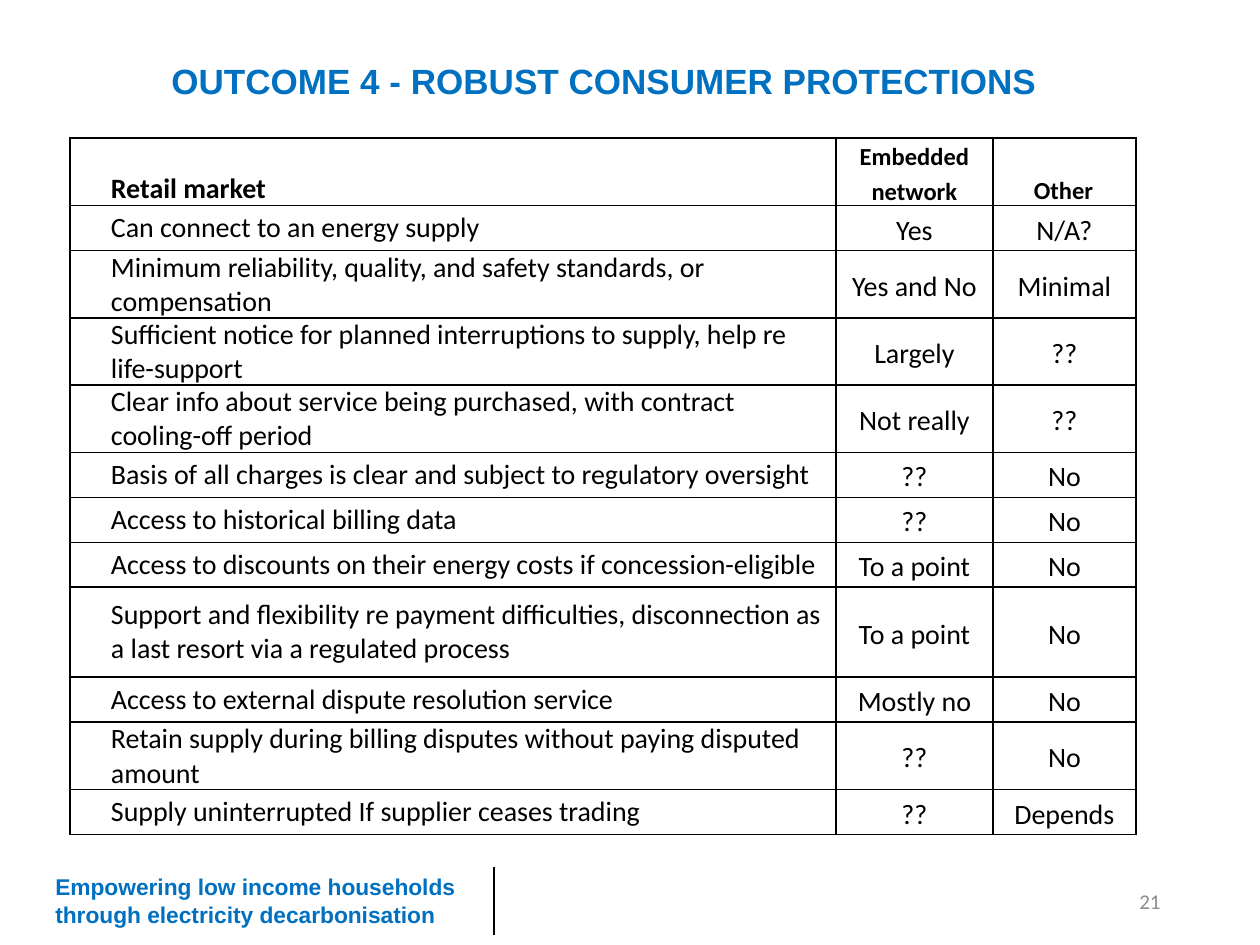
from dataclasses import dataclass

from lxml.etree import SubElement
from pptx import Presentation
from pptx.dml.color import RGBColor
from pptx.enum.shapes import MSO_CONNECTOR as Connector
from pptx.enum.text import MSO_ANCHOR as Anchor, PP_ALIGN as Align
from pptx.oxml.ns import qn
from pptx.util import Emu, Pt


@dataclass(frozen=True)
class Theme:
    blue: str = "0070C0"
    black: str = "000000"
    grey: str = "8C8C8C"
    heading_font: str = "Arial"
    body_font: str = "Calibri"
    title_size: int = 20
    body_size: int = 16
    header_size: int = 14
    footer_size: int = 13
    number_size: int = 12
    line_width: int = 1


theme = Theme()


def px(length):
    return Emu(round(length * 914400 / 126))


def write(frame, text, *, size, color=theme.black, font=theme.body_font, bold=False,
          align=Align.LEFT, anchor=Anchor.TOP, spacing=None, indent=0):
    frame.word_wrap = True
    frame.vertical_anchor = anchor
    frame.text = text
    paragraph = frame.paragraphs[0]
    paragraph.alignment = align
    if spacing:
        paragraph.line_spacing = spacing
    if indent:
        properties = paragraph._p.get_or_add_pPr()
        properties.set("marL", str(px(indent)))
        properties.set("indent", "0")
    paragraph.font.name = font
    paragraph.font.size = Pt(size)
    paragraph.font.bold = bold
    paragraph.font.color.rgb = RGBColor.from_string(color)


presentation = Presentation()
presentation.slide_width, presentation.slide_height = px(1260), px(945)
slide = presentation.slides.add_slide(presentation.slide_layouts[5])

# Footer: programme name, divider and page number
footer = slide.shapes.add_textbox(px(43), px(867), px(428), px(68))
write(footer.text_frame, "Empowering low income households through electricity decarbonisation",
      size=theme.footer_size, color=theme.blue, font=theme.heading_font, bold=True)

divider = slide.shapes.add_connector(Connector.STRAIGHT, px(494), px(867), px(494), px(935))
divider.line.color.rgb = RGBColor.from_string(theme.black)
divider.line.width = Pt(theme.line_width)
SubElement(divider._element.spPr, qn("a:effectLst"))

page_number = slide.shapes.add_textbox(px(890), px(876), px(283), px(50))
write(page_number.text_frame, "21", size=theme.number_size, color=theme.grey,
      align=Align.RIGHT, anchor=Anchor.MIDDLE)

# Title
title = slide.shapes.title
title.left, title.top, title.width, title.height = px(28), px(53), px(1152), px(55)
write(title.text_frame, "OUTCOME 4 - ROBUST CONSUMER PROTECTIONS", size=theme.title_size,
      color=theme.blue, font=theme.heading_font, bold=True, align=Align.CENTER)

# Protections table: row height, protection, embedded network, other
SINGLE, DOUBLE, TALL = 45, 67, 90
protections = [
    (DOUBLE, "Retail market", "Embedded network", "Other"),
    (SINGLE, "Can connect to an energy supply", "Yes", "N/A?"),
    (DOUBLE, "Minimum reliability, quality, and safety standards, or compensation",
     "Yes and No", "Minimal"),
    (DOUBLE, "Sufficient notice for planned interruptions to supply, help re life-support",
     "Largely", "??"),
    (DOUBLE, "Clear info about service being purchased, with contract cooling-off period",
     "Not really", "??"),
    (SINGLE, "Basis of all charges is clear and subject to regulatory oversight", "??", "No"),
    (SINGLE, "Access to historical billing data", "??", "No"),
    (SINGLE, "Access to discounts on their energy costs if concession-eligible",
     "To a point", "No"),
    (TALL, "Support and flexibility re payment difficulties, disconnection as a last resort "
     "via a regulated process", "To a point", "No"),
    (SINGLE, "Access to external dispute resolution service", "Mostly no", "No"),
    (DOUBLE, "Retain supply during billing disputes without paying disputed amount", "??", "No"),
    (SINGLE, "Supply uninterrupted If supplier ceases trading", "??", "Depends"),
]
column_widths = [766, 157, 143]
table_height = sum(row[0] for row in protections)
table = slide.shapes.add_table(len(protections), len(column_widths), px(70), px(138),
                               px(sum(column_widths)), px(table_height)).table
table.first_row = table.horz_banding = False
for column, width in zip(table.columns, column_widths):
    column.width = px(width)

for row_index, (height, *texts) in enumerate(protections):
    table.rows[row_index].height = px(height)
    header = row_index == 0
    for column_index, text in enumerate(texts):
        cell = table.cell(row_index, column_index)
        cell.margin_left = cell.margin_right = px(9)
        cell.margin_top = cell.margin_bottom = 0
        cell.vertical_anchor = Anchor.BOTTOM if header else Anchor.MIDDLE
        first = column_index == 0
        indented = first or (header and column_index == 2)
        write(cell.text_frame, text, bold=header,
              size=theme.header_size if header and not first else theme.body_size,
              align=Align.LEFT if indented else Align.CENTER,
              anchor=None, spacing=1.15 if header or not first else None,
              indent=32 if indented else 0)

        # Cell borders, then an empty fill
        properties = cell._tc.get_or_add_tcPr()
        for side in ("lnL", "lnR", "lnT", "lnB"):
            border = SubElement(properties, qn(f"a:{side}"), w=str(Pt(theme.line_width)))
            fill = SubElement(border, qn("a:solidFill"))
            SubElement(fill, qn("a:srgbClr"), val=theme.black)
        cell.fill.background()

presentation.save("out.pptx")
